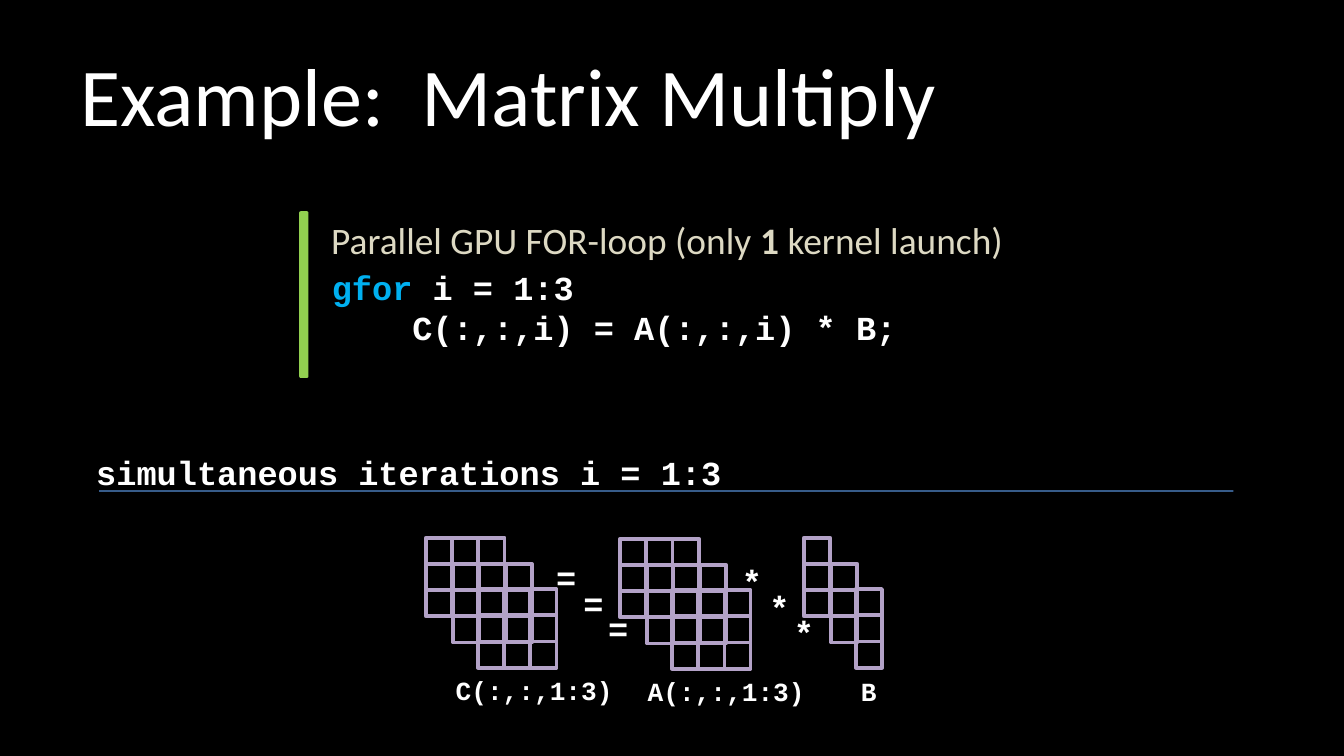
from pptx import Presentation
from pptx.dml.color import RGBColor
from pptx.enum.shapes import MSO_SHAPE
from pptx.enum.text import MSO_ANCHOR
from pptx.util import Pt

RECTANGLE = MSO_SHAPE.RECTANGLE
ROUNDED = MSO_SHAPE.ROUNDED_RECTANGLE
MIDDLE = MSO_ANCHOR.MIDDLE
BODY, CODE = "Calibri", "Courier New"
BLACK, WHITE, GREEN, BLUE = "000000", "FFFFFF", "92D050", "558ED5"
LILAC, SAND, KEYWORD = "B3A2C7", "DDD9C3", "00B0F0"
CELL = 14.05
LAYER_OFFSETS = [(0, 0), (14.6, 14), (27.8, 27.5)]


def color(hex_code):
    """Turn a hex string into a colour."""
    return RGBColor.from_string(hex_code)


def add_text(slide, box, lines, size, font=CODE, ink=WHITE, bold=True, wrap=False):
    """Place paragraphs, each a list of run texts, and return them."""
    frame = slide.shapes.add_textbox(*map(Pt, box)).text_frame
    frame.word_wrap = wrap
    for index, line in enumerate(lines):
        paragraph = frame.paragraphs[0] if index == 0 else frame.add_paragraph()
        for words in line:
            paragraph.add_run().text = words
        paragraph.font.name = font
        paragraph.font.size = Pt(size)
        paragraph.font.bold = bold
        paragraph.font.color.rgb = color(ink)
    return frame.paragraphs


def add_bar(slide, box, fill):
    """Place a thin rounded bar without an outline."""
    bar = slide.shapes.add_shape(ROUNDED, *map(Pt, box))
    bar.shadow.inherit = False
    bar.fill.solid()
    bar.fill.fore_color.rgb = color(fill)
    bar.line.fill.background()


def add_matrix(slide, left, top, columns, rows=3, hollow=False):
    """Place a grid of outlined cells, without its centre if hollow."""
    for row in range(rows):
        for column in range(columns):
            if hollow and row == column == 1:
                continue
            cell = slide.shapes.add_shape(
                RECTANGLE, Pt(left + column * CELL), Pt(top + row * CELL), Pt(CELL), Pt(CELL))
            cell.shadow.inherit = False
            cell.fill.background()
            cell.line.color.rgb = color(LILAC)
            cell.line.width = Pt(2)


def add_title(slide, left, top, width, height):
    """Place the slide title."""
    box = slide.shapes.add_textbox(Pt(left), Pt(top), Pt(width), Pt(height))
    frame = box.text_frame
    frame.word_wrap = True
    frame.vertical_anchor = MIDDLE
    title = frame.paragraphs[0]
    title.text = "Example:  Matrix Multiply"
    title.font.name = BODY
    title.font.size = Pt(44)
    title.font.color.rgb = color(WHITE)


def add_loop(slide, left, top, height):
    """Place the loop caption and code beside a green bar."""
    add_bar(slide, (left, top, 5, height), GREEN)
    caption = add_text(slide, (left + 10, top - 0.4, 378, 31.5),
                       [["Parallel GPU FOR-loop (only ", "1", " kernel launch)"]],
                       20, BODY, SAND, bold=False)
    caption[0].runs[1].font.bold = True
    code = add_text(slide, (left - 0.4, top + 26.3, 360, 51),
                    [[" gfor ", "i = 1:3"], ["     C(:,:,i) = A(:,:,i) * B;"]],
                    18, wrap=True)
    code[0].runs[0].font.color.rgb = color(KEYWORD)


def add_iteration_heading(slide, left, top, width):
    """Place the iteration heading above its rule."""
    add_text(slide, (left, top, 477.4, 29), [["simultaneous iterations i = 1:3"]], 18, wrap=True)
    add_bar(slide, (left + 8.6, top + 24.1, width, 0.7), BLUE)


def add_products(slide, left, top):
    """Place the stacked matrix products, last iteration at the back."""
    for label, x, y, width in (("C(:,:,1:3)", 8.8, 69.8, 99.4),
                               ("A(:,:,1:3)", 111.7, 70.2, 99.4), ("B", 225.9, 70.2, 23)):
        add_text(slide, (left + x, top + y, width, 24.5), [[label]], 14)
    for iteration, (across, down) in reversed(list(enumerate(LAYER_OFFSETS))):
        x, y = left + across, top + down
        add_matrix(slide, x, y, 3)
        add_matrix(slide, x + 104, y + 0.5, 3, hollow=iteration == 1)
        add_matrix(slide, x + 202.5, y, 1)
        add_text(slide, (x + 62.7, y + 6.7, 25.2, 29), [["="]], 18)
        add_text(slide, (x + 162.2, y + 8.8, 25.2, 29), [["*"]], 18)


def main():
    """Build the slide and save it."""
    deck = Presentation()
    deck.slide_width, deck.slide_height = Pt(720), Pt(405)
    slide = deck.slides.add_slide(deck.slide_layouts[6])
    slide.background.fill.solid()
    slide.background.fill.fore_color.rgb = color(BLACK)
    add_iteration_heading(slide, 44.5, 238.6, 607.7)
    add_products(slide, 228.2, 288.1)
    add_title(slide, 36, 16.5, 648, 67.7)
    add_loop(slide, 160.3, 113.2, 89.3)
    deck.save("out.pptx")


if __name__ == "__main__":
    main()
